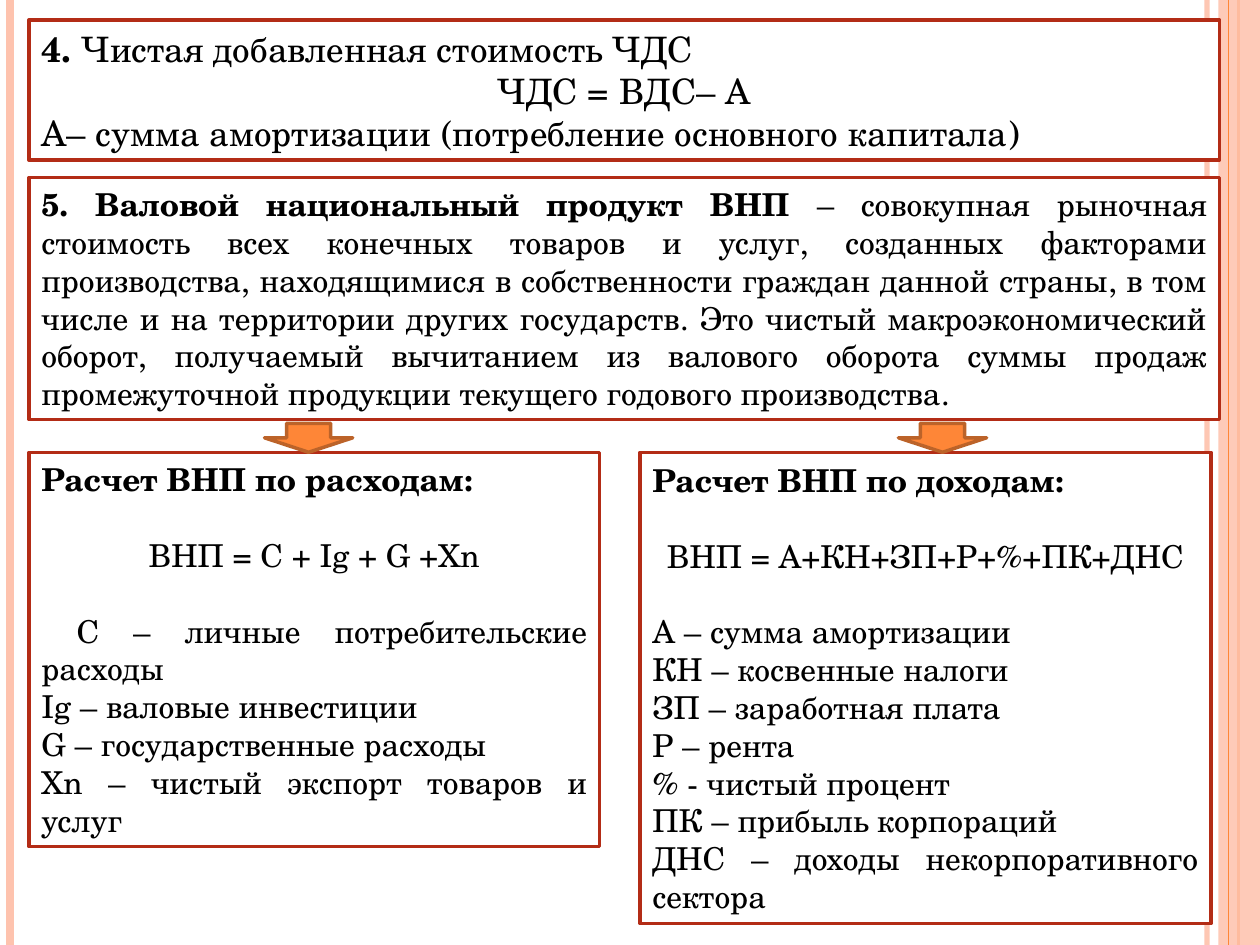
from lxml import etree
from pptx import Presentation
from pptx import util as u
from pptx.dml.color import RGBColor
from pptx.enum import shapes, text
from pptx.oxml.ns import qn

COLS, ROWS = 100, 75  # slide grid, square cells
FONT = "TeX Gyre Schola"
RUST, PEACH, ORANGE, BROWN = "B32C16", "FEC3AE", "FE8637", "BC6329"
ALIGN = {"l": text.PP_ALIGN.LEFT, "c": text.PP_ALIGN.CENTER,
         "j": text.PP_ALIGN.JUSTIFY}

deck = Presentation()
deck.slide_width, deck.slide_height = u.Inches(10), u.Inches(7.5)
slide = deck.slides.add_slide(deck.slide_layouts[6])
CELL = deck.slide_width / COLS


def grid(*nums):
    return [round(n * CELL) for n in nums]


def hue(code):
    return RGBColor.from_string(code)


def put(item, form):
    for key, val in form.items():
        setattr(item, key, val)


def fade(fill, share):
    tint = fill._xPr.find(".//" + qn("a:srgbClr"))
    etree.SubElement(tint, qn("a:alpha"), val=str(share * 1000))


def shape(kind, box, fill, edge=None):
    item = slide.shapes.add_shape(kind, *grid(*box))
    item.shadow.inherit = False
    item.fill.solid()
    item.fill.fore_color.rgb = hue(fill)
    if edge:
        item.line.color.rgb = hue(edge)
        item.line.width = u.Pt(2)
    else:
        item.line.fill.background()
    return item


def rail(x, code, width, share=None):
    line = slide.shapes.add_connector(shapes.MSO_CONNECTOR.STRAIGHT,
                                      *grid(x, 0, x, ROWS))
    line.line.color.rgb = hue(code)
    line.line.width = u.Pt(width)
    if share:
        fade(line.line.fill, share)
    etree.SubElement(line._element.spPr, qn("a:effectLst"))


def rails():
    """Vertical stripes along both slide edges."""
    rail(95.8, PEACH, 3, 93)
    rail(0.8, PEACH, 4.5)
    rail(98.3, ORANGE, 1.5)
    band = shape(shapes.MSO_SHAPE.RECTANGLE, (96.7, 0, 3.3, ROWS), PEACH)
    fade(band.fill, 87)
    rail(97.5, ORANGE, 0.75)


def card(box, size, paras):
    """Framed text; each paragraph is (align, bold part, plain part, format)."""
    frame = shape(shapes.MSO_SHAPE.RECTANGLE, box, "FFFFFF", RUST).text_frame
    put(frame, {"word_wrap": True, "vertical_anchor": text.MSO_ANCHOR.MIDDLE,
                "auto_size": text.MSO_AUTO_SIZE.NONE})
    for num, (side, bold, plain, form) in enumerate(paras):
        para = frame.add_paragraph() if num else frame.paragraphs[0]
        put(para, {"alignment": ALIGN[side], **form})
        for words, heavy in ((bold, True), (plain, False)):
            if words:
                run = para.add_run()
                run.text = words
                put(run.font, {"name": FONT, "size": u.Pt(size), "bold": heavy})
                run.font.color.rgb = hue("000000")


def sums(box, title, rule, terms, first=0):
    """Card with a title, a formula set apart, and its terms."""
    gap = u.Pt(21.6)
    paras = [("j", title, "", {}),
             ("c", "", rule, {"space_before": gap, "space_after": gap})]
    paras += [("j", "", term, {}) for term in terms]
    card(box, 18, paras)
    if first:
        para = slide.shapes[-1].text_frame.paragraphs[2]
        para._p.get_or_add_pPr().set("indent", str(u.Inches(first)))


def arrow(box, share):
    """Down arrow ending on the top edge of a box, at a share of its width."""
    x, y, w, _ = box
    shape(shapes.MSO_SHAPE.DOWN_ARROW,
          (x + w * share - 3.5, y - 2.3, 7, 2.3), ORANGE, BROWN)


rails()

# Definitions
LEFT, WIDE, HALF, TOP = 2.3, 94.5, 45.3, 35.9
card((LEFT, 1.6, WIDE, 11.1), 20, [
    ("l", "4. ", "Чистая добавленная стоимость ЧДС", {}),
    ("c", "", "ЧДС = ВДС– А", {}),
    ("l", "", "А– сумма амортизации (потребление основного капитала)", {})])
card((LEFT, 14.1, WIDE, 19.2), 18, [
    ("j", "5. Валовой национальный продукт ВНП ",
     "– совокупная рыночная стоимость всех конечных товаров и услуг, "
     "созданных факторами производства, находящимися в собственности "
     "граждан данной страны, в том числе и на территории других государств. "
     "Это чистый макроэкономический оборот, получаемый вычитанием из "
     "валового оборота суммы продаж промежуточной продукции текущего "
     "годового производства.", {})])

# Two ways of counting
spend = (LEFT, TOP, HALF, 31.3)
earn = (50.8, TOP, HALF, 37.4)
sums(spend, "Расчет ВНП по расходам:", "ВНП = С + Ig + G +Xn", [
    "С – личные потребительские расходы",
    "Ig – валовые инвестиции",
    "G – государственные расходы",
    "Xn – чистый экспорт товаров и услуг"], first=0.28)
sums(earn, "Расчет ВНП по доходам:", "ВНП = А+КН+ЗП+Р+%+ПК+ДНС", [
    "А – сумма амортизации",
    "КН – косвенные налоги",
    "ЗП – заработная плата",
    "Р – рента",
    "% - чистый процент",
    "ПК – прибыль корпораций",
    "ДНС – доходы некорпоративного сектора"])
arrow(earn, 0.53)
arrow(spend, 0.49)

deck.save("out.pptx")
